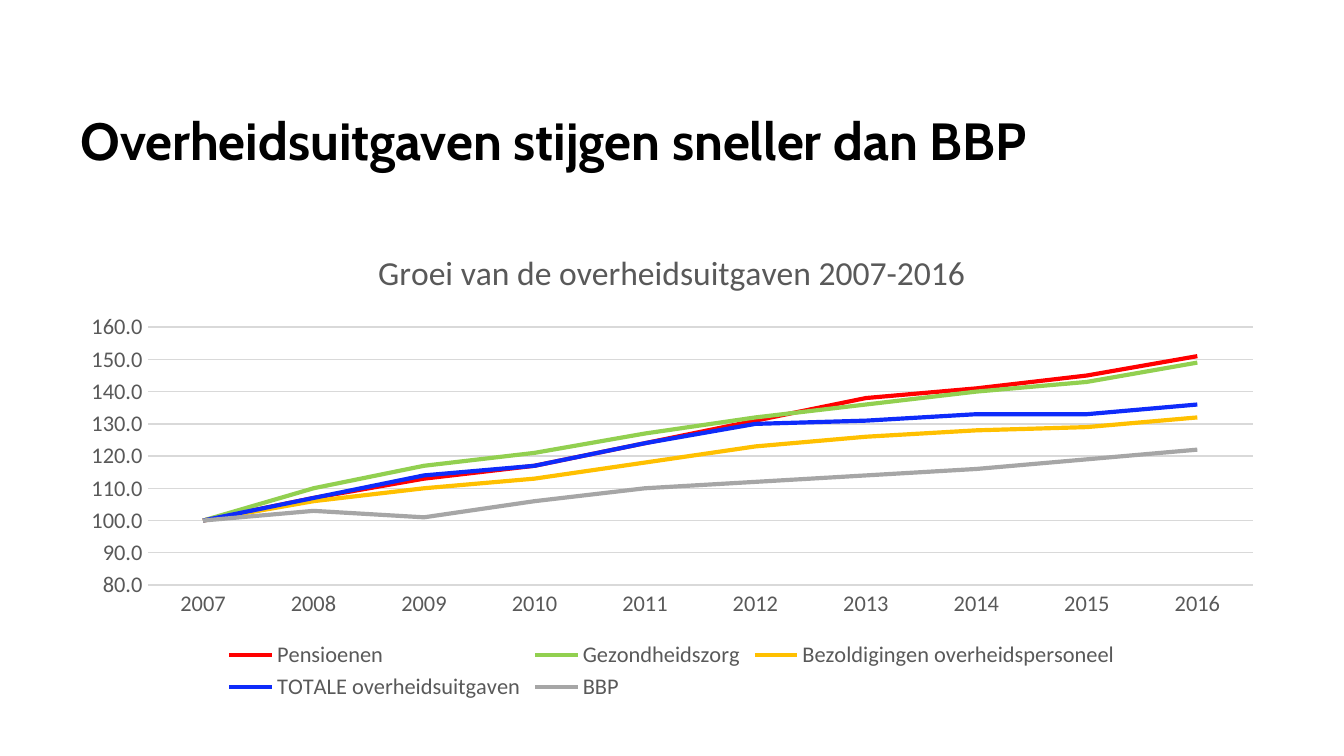
from dataclasses import dataclass

from pptx import Presentation
from pptx import util as u
from pptx.chart.data import CategoryChartData
from pptx.dml.color import RGBColor
from pptx.enum import chart as charts, text

PX = 9525  # EMU per px, 96 px to the inch
GREY, GRID = "595959", "D9D9D9"


@dataclass
class Area:
    left: int
    top: int
    width: int
    height: int

    def emu(self) -> list[int]:
        return [side * PX for side in (self.left, self.top, self.width, self.height)]


@dataclass
class Spending:
    name: str
    color: str
    index: tuple[int, ...]


YEARS = [str(year) for year in range(2007, 2017)]
SPENDING = [
    Spending("Pensioenen", "FF0000", (100, 107, 113, 117, 124, 131, 138, 141, 145, 151)),
    Spending("Gezondheidszorg", "92D050", (100, 110, 117, 121, 127, 132, 136, 140, 143, 149)),
    Spending("Bezoldigingen overheidspersoneel", "FFC000",
             (100, 106, 110, 113, 118, 123, 126, 128, 129, 132)),
    Spending("TOTALE overheidsuitgaven", "0E2BFA",
             (100, 107, 114, 117, 124, 130, 131, 133, 133, 136)),
    Spending("BBP", "A6A6A6", (100, 103, 101, 106, 110, 112, 114, 116, 119, 122)),
]


def rgb(value: str) -> RGBColor:
    return RGBColor.from_string(value)


def set_all(target, values: dict) -> None:
    for name, value in values.items():
        setattr(target, name, value)


def set_font(font, name: str, size: int, color: str, bold: bool = False) -> None:
    set_all(font, {"name": name, "size": u.Pt(size), "bold": bold})
    font.color.rgb = rgb(color)


def set_line(line, color: str, width: float) -> None:
    line.color.rgb = rgb(color)
    line.width = u.Pt(width)


def add_heading(page, area: Area, words: str) -> None:
    box = page.shapes.add_textbox(*area.emu())
    set_all(box.text_frame, {"word_wrap": True, "vertical_anchor": text.MSO_ANCHOR.MIDDLE})
    span = box.text_frame.paragraphs[0].add_run()
    span.text = words
    set_font(span.font, "Cabin", 28, "000000", bold=True)


def add_growth_chart(page, area: Area, title: str, rows: list[Spending]) -> None:
    data = CategoryChartData(number_format="0.0")
    data.categories = YEARS
    for row in rows:
        data.add_series(row.name, row.index)
    chart = page.shapes.add_chart(charts.XL_CHART_TYPE.LINE, *area.emu(), data).chart
    set_font(chart.font, "Calibri", 10, "000000")

    # Chart title and legend
    chart.has_title = True
    chart.chart_title.include_in_layout = False
    para = chart.chart_title.text_frame.paragraphs[0]
    span = para.add_run()
    span.text = title
    set_font(span.font, "Calibri", 18, GREY)
    chart.has_legend = True
    set_all(chart.legend, {"position": charts.XL_LEGEND_POSITION.BOTTOM,
                           "include_in_layout": False})
    set_font(chart.legend.font, "Calibri", 12, GREY)

    # Axes
    for axis in (chart.category_axis, chart.value_axis):
        set_all(axis, {"major_tick_mark": charts.XL_TICK_MARK.NONE,
                       "minor_tick_mark": charts.XL_TICK_MARK.NONE})
        set_font(axis.tick_labels.font, "Calibri", 12, GREY)
    set_line(chart.category_axis.format.line, GRID, 0.75)
    set_all(chart.value_axis, {"minimum_scale": 80, "maximum_scale": 160,
                               "major_unit": 10, "has_major_gridlines": True})
    set_all(chart.value_axis.tick_labels, {"number_format": "0.0",
                                           "number_format_is_linked": False})
    chart.value_axis.format.line.fill.background()
    set_line(chart.value_axis.major_gridlines.format.line, GRID, 0.75)

    # Series
    chart.plots[0].vary_by_categories = False
    for series, row in zip(chart.plots[0].series, rows):
        series.smooth = False
        series.marker.style = charts.XL_MARKER_STYLE.NONE
        set_line(series.format.line, row.color, 2.25)


def main() -> None:
    deck = Presentation()
    set_all(deck, {"slide_width": 960 * PX, "slide_height": 540 * PX})
    page = deck.slides.add_slide(deck.slide_layouts[6])
    add_heading(page, Area(48, 76, 864, 47), "Overheidsuitgaven stijgen sneller dan BBP")
    add_growth_chart(page, Area(48, 162, 864, 342),
                     "Groei van de overheidsuitgaven 2007-2016", SPENDING)
    deck.save("out.pptx")


if __name__ == "__main__":
    main()
